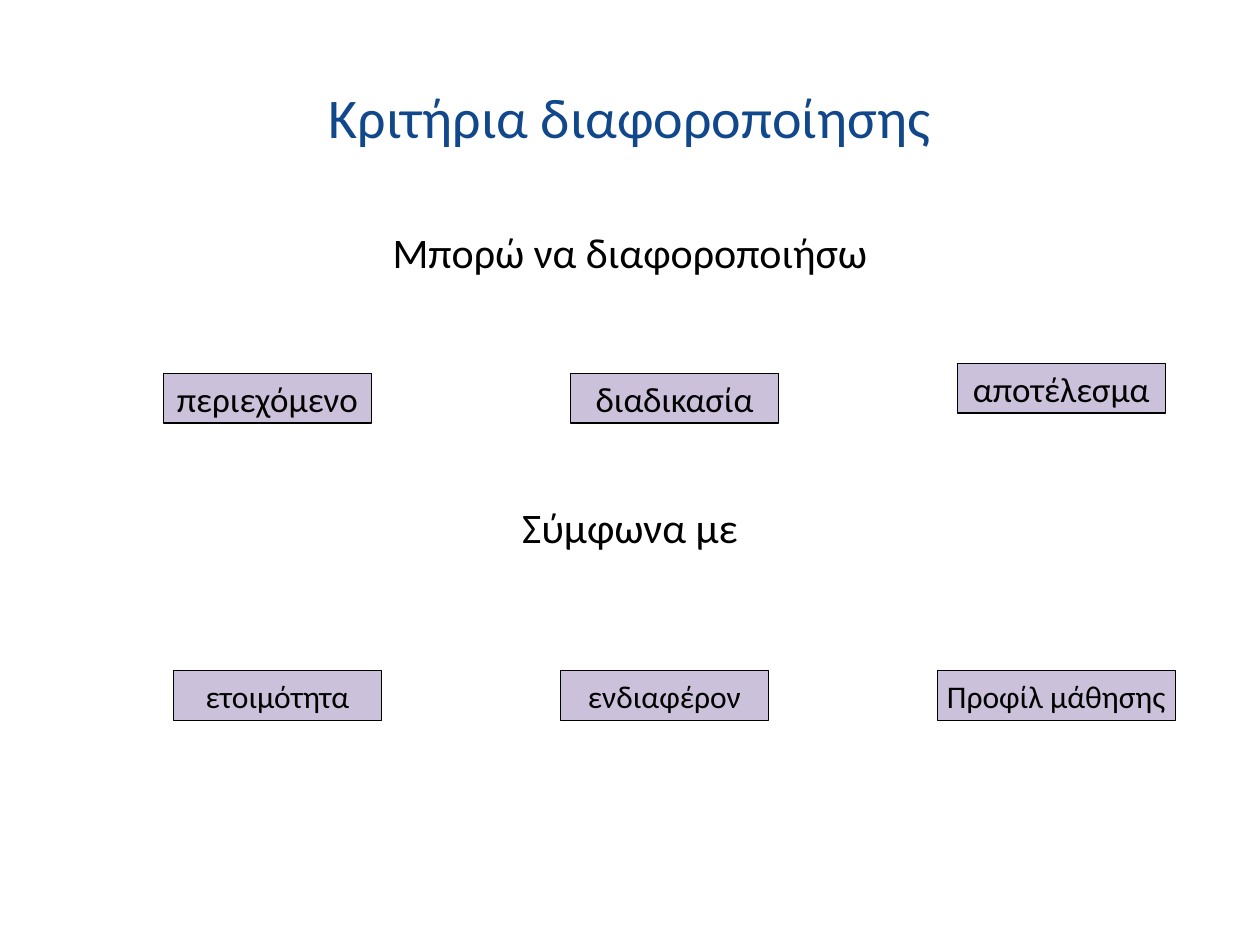
"""Build a slide on the criteria of differentiated teaching."""
from lxml import etree
from pptx import Presentation
from pptx.dml.color import RGBColor
from pptx.enum.shapes import MSO_SHAPE
from pptx.enum.text import MSO_ANCHOR, PP_ALIGN
from pptx.oxml.ns import qn
from pptx.util import Pt

RECTANGLE = MSO_SHAPE.RECTANGLE
MIDDLE = MSO_ANCHOR.MIDDLE
CENTER = PP_ALIGN.CENTER
COLORS = {"title": "11478B", "text": "000000", "box": "CCC1DA", "border": "000000"}
BOX_HEIGHT = 28.4


def format_paragraph(paragraph, size, color):
    paragraph.alignment = CENTER
    paragraph.font.name = "Calibri"
    paragraph.font.size = Pt(size)
    paragraph.font.color.rgb = RGBColor.from_string(COLORS[color])


def place(placeholder, left, top, width, height):
    placeholder.left, placeholder.top = Pt(left), Pt(top)
    placeholder.width, placeholder.height = Pt(width), Pt(height)


presentation = Presentation()
presentation.slide_width = Pt(720)
presentation.slide_height = Pt(540)
slide = presentation.slides.add_slide(presentation.slide_layouts[1])

title = slide.shapes.title
place(title, 36, 21.6, 648, 90)
title.text_frame.text = "Κριτήρια διαφοροποίησης"
title.text_frame.vertical_anchor = MIDDLE
format_paragraph(title.text_frame.paragraphs[0], 32, "title")

prompts = slide.placeholders[1]
place(prompts, 36, 126, 648, 356.4)
prompts.text_frame.text = "Μπορώ να διαφοροποιήσω\nΣύμφωνα με"
for prompt, space_before in zip(prompts.text_frame.paragraphs, (0, 128)):
    format_paragraph(prompt, 24, "text")
    prompt.space_before = Pt(space_before)
    etree.SubElement(prompt._p.get_or_add_pPr(), qn("a:buNone"))

criteria = [
    ("περιεχόμενο", 93.4, 213.3, 119, 20),
    ("διαδικασία", 326, 213.3, 119, 20),
    ("αποτέλεσμα", 547, 207.6, 119, 20),
    ("ετοιμότητα", 99.1, 383.3, 119, 18),
    ("ενδιαφέρον", 320.2, 383.3, 119, 18),
    ("Προφίλ μάθησης", 535.6, 383.3, 136, 18),
]
for criterion, left, top, width, size in criteria:
    box = slide.shapes.add_shape(RECTANGLE, Pt(left), Pt(top), Pt(width), Pt(BOX_HEIGHT))
    box.shadow.inherit = False
    box.fill.solid()
    box.fill.fore_color.rgb = RGBColor.from_string(COLORS["box"])
    box.line.color.rgb = RGBColor.from_string(COLORS["border"])
    box.line.width = Pt(0.75)
    box.text_frame.text = criterion
    box.text_frame.word_wrap = False
    box.text_frame.vertical_anchor = MIDDLE
    format_paragraph(box.text_frame.paragraphs[0], size, "text")

presentation.save("out.pptx")
